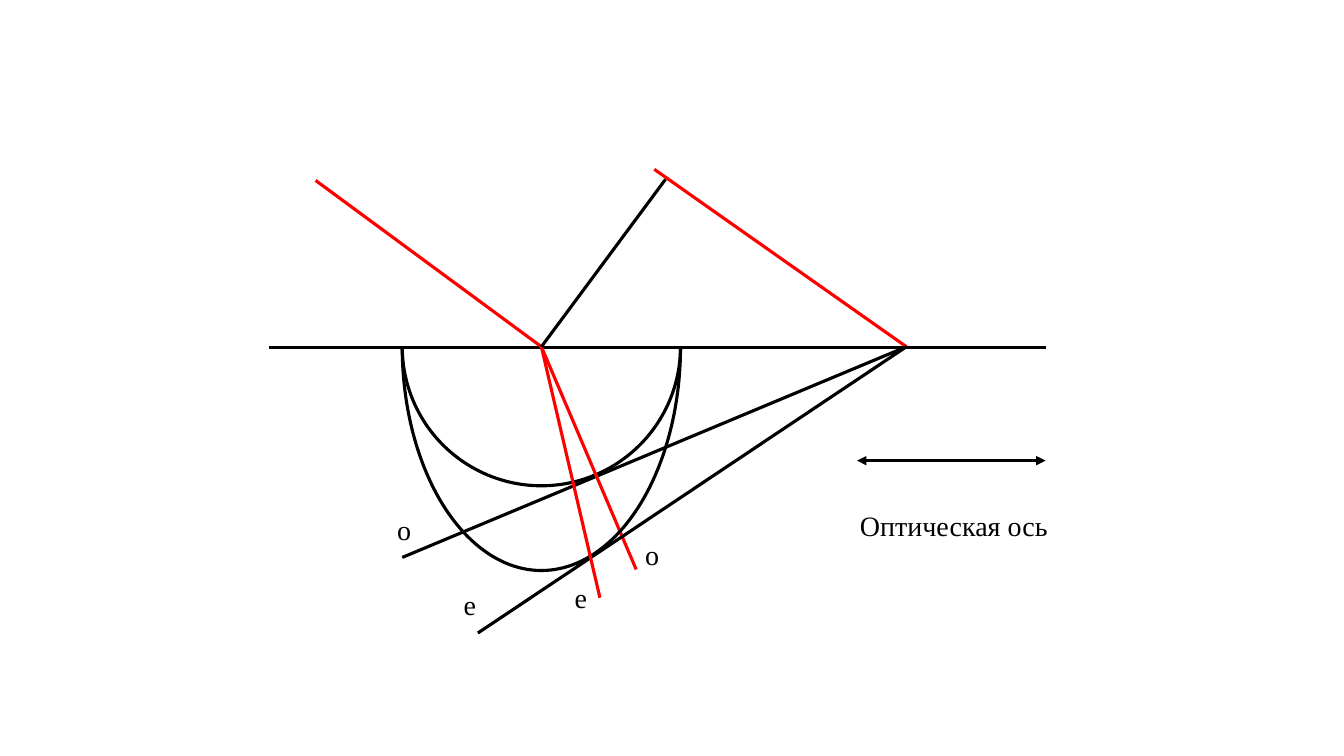
from pptx import Presentation
from pptx import util as u
from pptx.dml.color import RGBColor
from pptx.enum import shapes, text
from pptx.oxml.ns import qn
from lxml import etree

# Grid: one column or row is one inch
CELL = u.Inches(1)
COLS, ROWS = 13.33, 7.5
BLACK, RED = "000000", "FF0000"
LABEL_FONT = {"name": "Times New Roman", "size": u.Pt(20)}
LABEL_FRAME = {"word_wrap": False, "auto_size": text.MSO_AUTO_SIZE.SHAPE_TO_FIT_TEXT}

# Key points and sizes of the construction
SURFACE = 3.44
ENTRY = (5.37, SURFACE)
EXIT = (8.99, SURFACE)
WAVE_RADIUS = 1.38


def grid(*cells):
    return [int(c * CELL) for c in cells]


def rgb(hex_color):
    return RGBColor.from_string(hex_color)


def set_all(target, values):
    for name, value in values.items():
        setattr(target, name, value)


def style_line(line, color):
    line.color.rgb = rgb(color)
    line.width = u.Pt(2.25)


def add_line(group, start, end, color=BLACK, arrows=False):
    sp = group.shapes.add_connector(shapes.MSO_CONNECTOR.STRAIGHT, *grid(*start, *end))
    style_line(sp.line, color)
    if arrows:
        ln = sp.line._get_or_add_ln()
        for tag in ("a:headEnd", "a:tailEnd"):
            etree.SubElement(ln, qn(tag), type="triangle")
    etree.SubElement(sp._element.spPr, qn("a:effectLst"))


def add_wavefront(group, depth):
    """Lower half of an ellipse centred on the entry point."""
    x, y = ENTRY
    box = grid(x - WAVE_RADIUS, y - depth, 2 * WAVE_RADIUS, 2 * depth)
    sp = group.shapes.add_shape(shapes.MSO_SHAPE.ARC, *box)
    sp.adjustments[0], sp.adjustments[1] = 0.12, 107.71
    sp.shadow.inherit = False
    sp.fill.background()
    style_line(sp.line, BLACK)


def add_label(group, words, left, top, width=0.34):
    sp = group.shapes.add_textbox(*grid(left, top, width, 0.44))
    tf = sp.text_frame
    set_all(tf, LABEL_FRAME)
    r = tf.paragraphs[0].add_run()
    r.text = words
    set_all(r.font, LABEL_FONT)
    r.font.color.rgb = rgb(BLACK)


def main():
    prs = Presentation()
    prs.slide_width, prs.slide_height = grid(COLS, ROWS)
    slide = prs.slides.add_slide(prs.slide_layouts[6])
    diagram = slide.shapes.add_group_shape()

    # Crystal surface and the first incident ray
    add_line(diagram, (2.67, 3.45), (10.37, 3.45))
    add_line(diagram, ENTRY, (3.13, 1.79), RED)

    # Ordinary wave: circle, second incident ray, front and ray
    add_wavefront(diagram, WAVE_RADIUS)
    add_line(diagram, EXIT, (6.49, 1.68), RED)
    add_line(diagram, EXIT, (3.99, 5.53))
    add_line(diagram, ENTRY, (6.31, 5.65), RED)

    # Extraordinary wave: ellipse, front and ray
    add_wavefront(diagram, 2.22)
    add_line(diagram, EXIT, (4.74, 6.28))
    add_line(diagram, ENTRY, (5.95, 5.93), RED)

    # Incident wavefront
    add_line(diagram, ENTRY, (6.6, 1.78))

    # Labels of fronts and rays
    for words, left, top in (("o", 3.84, 5.04), ("o", 6.3, 5.28),
                             ("e", 4.5, 5.78), ("e", 5.6, 5.71)):
        add_label(diagram, words, left, top)

    # Optical axis
    add_line(diagram, (10.37, 4.57), (8.5, 4.57), arrows=True)
    add_label(diagram, "Оптическая ось", 8.43, 5, 2.08)

    prs.save("out.pptx")


main()
